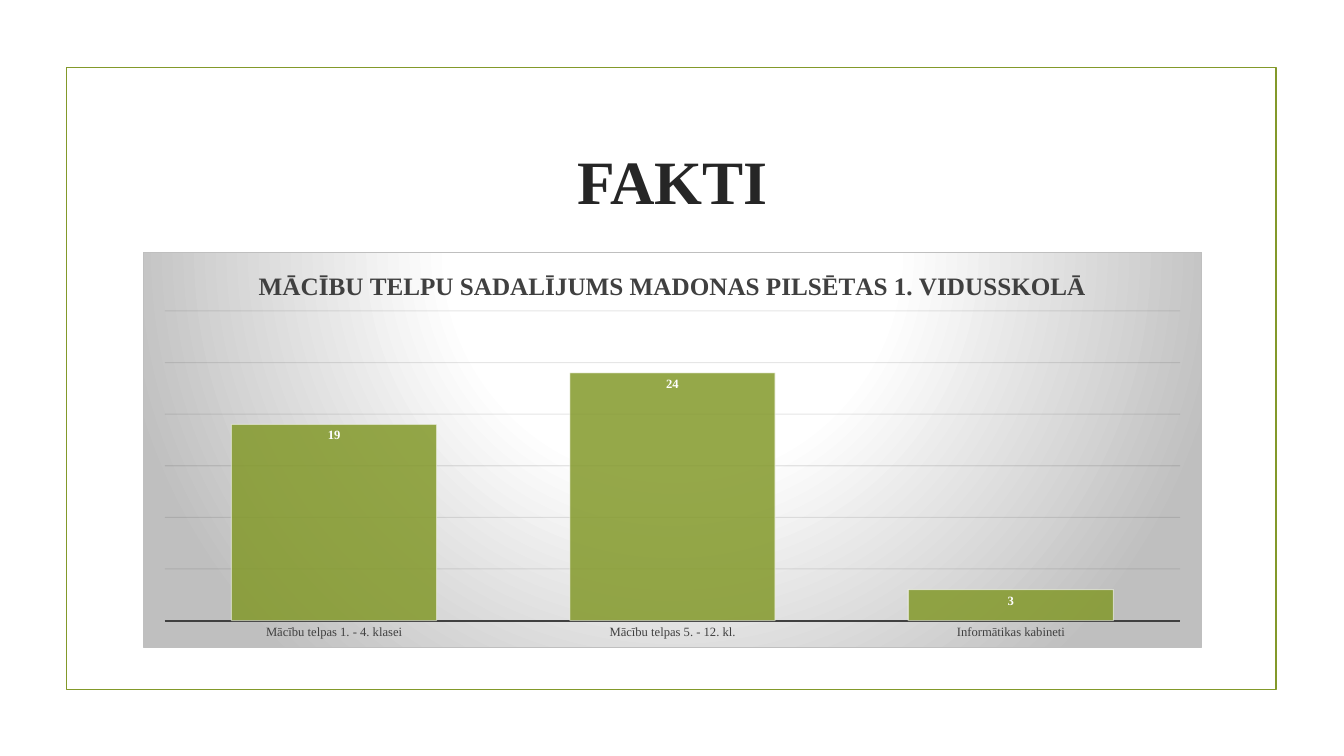
from lxml import etree
from pptx import Presentation
from pptx.chart.data import CategoryChartData
from pptx.dml.color import RGBColor
from pptx.enum.chart import XL_CHART_TYPE, XL_LABEL_POSITION, XL_TICK_LABEL_POSITION, XL_TICK_MARK
from pptx.enum.shapes import MSO_SHAPE
from pptx.enum.text import MSO_ANCHOR, PP_ALIGN
from pptx.oxml import parse_xml
from pptx.oxml.ns import nsdecls, qn
from pptx.util import Inches, Pt

COLUMNS = XL_CHART_TYPE.COLUMN_CLUSTERED
INSIDE_END = XL_LABEL_POSITION.INSIDE_END
NO_TICK = XL_TICK_MARK.NONE
NO_TICK_LABELS = XL_TICK_LABEL_POSITION.NONE
RECT = MSO_SHAPE.RECTANGLE
MIDDLE = MSO_ANCHOR.MIDDLE
CENTER = PP_ALIGN.CENTER

GREEN = RGBColor(0x83, 0x99, 0x2A)
INK = RGBColor(0x26, 0x26, 0x26)
GRAY = RGBColor(0x40, 0x40, 0x40)
SILVER = RGBColor(0xBF, 0xBF, 0xBF)
NEAR_BLACK = RGBColor(0x0D, 0x0D, 0x0D)
BLACK = RGBColor(0, 0, 0)
WHITE = RGBColor(0xFF, 0xFF, 0xFF)

FONT = "Times New Roman"
WIDTH, HEIGHT = 13.33, 7.5

TITLE = "FAKTI"
CHART_TITLE = "MĀCĪBU TELPU SADALĪJUMS MADONAS PILSĒTAS 1. VIDUSSKOLĀ"
ROOMS = {
    "Mācību telpas 1. - 4. klasei": 19,
    "Mācību telpas 5. - 12. kl.": 24,
    "Informātikas kabineti": 3,
}


class FactSlide:
    """Holds the style and the slide; boxes are shares of the slide's size."""

    def __init__(self, prs):
        self.prs = prs
        self.slide = prs.slides.add_slide(prs.slide_layouts[6])

    def place(self, box):
        w, h = self.prs.slide_width, self.prs.slide_height
        return [round(share * full) for share, full in zip(box, (w, h, w, h))]

    def style(self, font, size, color, bold=False):
        for name, value in {"name": FONT, "size": Pt(size), "bold": bold}.items():
            setattr(font, name, value)
        font.color.rgb = color

    def stroke(self, line, color, width, alpha=100):
        line.color.rgb = color
        line.width = Pt(width)
        self.fade(line.fill, alpha, line._ln)

    def fade(self, fill, percent, parent):
        if percent < 100:
            color = next(parent.iter(qn("a:srgbClr")))
            etree.SubElement(color, qn("a:alpha"), val=str(percent * 1000))

    def frame(self, box):
        s = self.slide.shapes.add_shape(RECT, *self.place(box))
        s.shadow.inherit = False
        s.fill.background()
        self.stroke(s.line, GREEN, 1.25)

    def heading(self, text, box):
        tf = self.slide.shapes.add_textbox(*self.place(box)).text_frame
        tf.word_wrap = True
        tf.vertical_anchor = MIDDLE
        p = tf.paragraphs[0]
        p.alignment = CENTER
        r = p.add_run()
        r.text = text
        self.style(r.font, 44, INK, True)

    def column_chart(self, title, values, box):
        data = CategoryChartData()
        data.categories = list(values)
        data.add_series("Series 1", list(values.values()))
        chart = self.slide.shapes.add_chart(COLUMNS, *self.place(box), data).chart
        chart.has_legend = False
        self.style(chart.font, 10, BLACK)

        # Chart title
        chart.has_title = True
        chart.chart_title.include_in_layout = False
        r = chart.chart_title.text_frame.paragraphs[0].add_run()
        r.text = title
        self.style(r.font, 18, GRAY, True)

        # Axes
        cat = chart.category_axis
        cat.major_tick_mark = cat.minor_tick_mark = NO_TICK
        self.style(cat.tick_labels.font, 9, GRAY)
        self.stroke(cat.format.line, GRAY, 1.5)
        val = chart.value_axis
        for name, value in {"minimum_scale": 0, "maximum_scale": 30, "major_unit": 5,
                            "tick_label_position": NO_TICK_LABELS,
                            "has_major_gridlines": True, "visible": False}.items():
            setattr(val, name, value)
        self.stroke(val.major_gridlines.format.line, NEAR_BLACK, 0.75, 10)

        # Columns and their labels
        plot = chart.plots[0]
        plot.gap_width = 65
        plot.vary_by_categories = False
        series = plot.series[0]
        series.invert_if_negative = False
        series.format.fill.solid()
        series.format.fill.fore_color.rgb = GREEN
        self.fade(series.format.fill, 85, series._element.spPr)
        self.stroke(series.format.line, WHITE, 0.75, 50)
        labels = series.data_labels
        labels.show_value = True
        labels.position = INSIDE_END
        self.style(labels.font, 9, WHITE, True)

        self.plot_layout(chart, x=0.02, y=0.148, w=0.96, h=0.784)
        self.backdrop(chart)

    def plot_layout(self, chart, **shares):
        area = chart._chartSpace.chart.plotArea
        for old in area.findall(qn("c:layout")):
            area.remove(old)
        sizes = "".join(f'<c:{k} val="{v}"/>' for k, v in shares.items())
        area.insert(0, parse_xml(
            f'<c:layout {nsdecls("c")}><c:manualLayout><c:layoutTarget val="inner"/>'
            f'<c:xMode val="edge"/><c:yMode val="edge"/>{sizes}'
            '</c:manualLayout></c:layout>'))

    def backdrop(self, chart):
        stops = "".join(f'<a:gs pos="{at * 1000}"><a:srgbClr val="{color}"/></a:gs>'
                        for at, color in ((0, WHITE), (39, WHITE), (100, SILVER)))
        chart._chartSpace.chart.addnext(parse_xml(
            f'<c:spPr {nsdecls("c", "a")}><a:gradFill><a:gsLst>{stops}</a:gsLst>'
            '<a:path path="circle">'
            '<a:fillToRect l="50000" t="-80000" r="50000" b="180000"/></a:path></a:gradFill>'
            f'<a:ln w="{Pt(0.75)}"><a:solidFill><a:srgbClr val="{SILVER}"/></a:solidFill></a:ln>'
            '</c:spPr>'))


def main():
    prs = Presentation()
    prs.slide_width, prs.slide_height = Inches(WIDTH), Inches(HEIGHT)
    s = FactSlide(prs)
    left, width = 1.42 / WIDTH, 10.5 / WIDTH
    s.frame((0.66 / WIDTH, 0.67 / HEIGHT, 12 / WIDTH, 6.17 / HEIGHT))
    s.heading(TITLE, (left, 1.07 / HEIGHT, width, 1.43 / HEIGHT))
    s.column_chart(CHART_TITLE, ROOMS, (left, 2.5 / HEIGHT, width, 3.93 / HEIGHT))
    prs.save("out.pptx")


if __name__ == "__main__":
    main()
